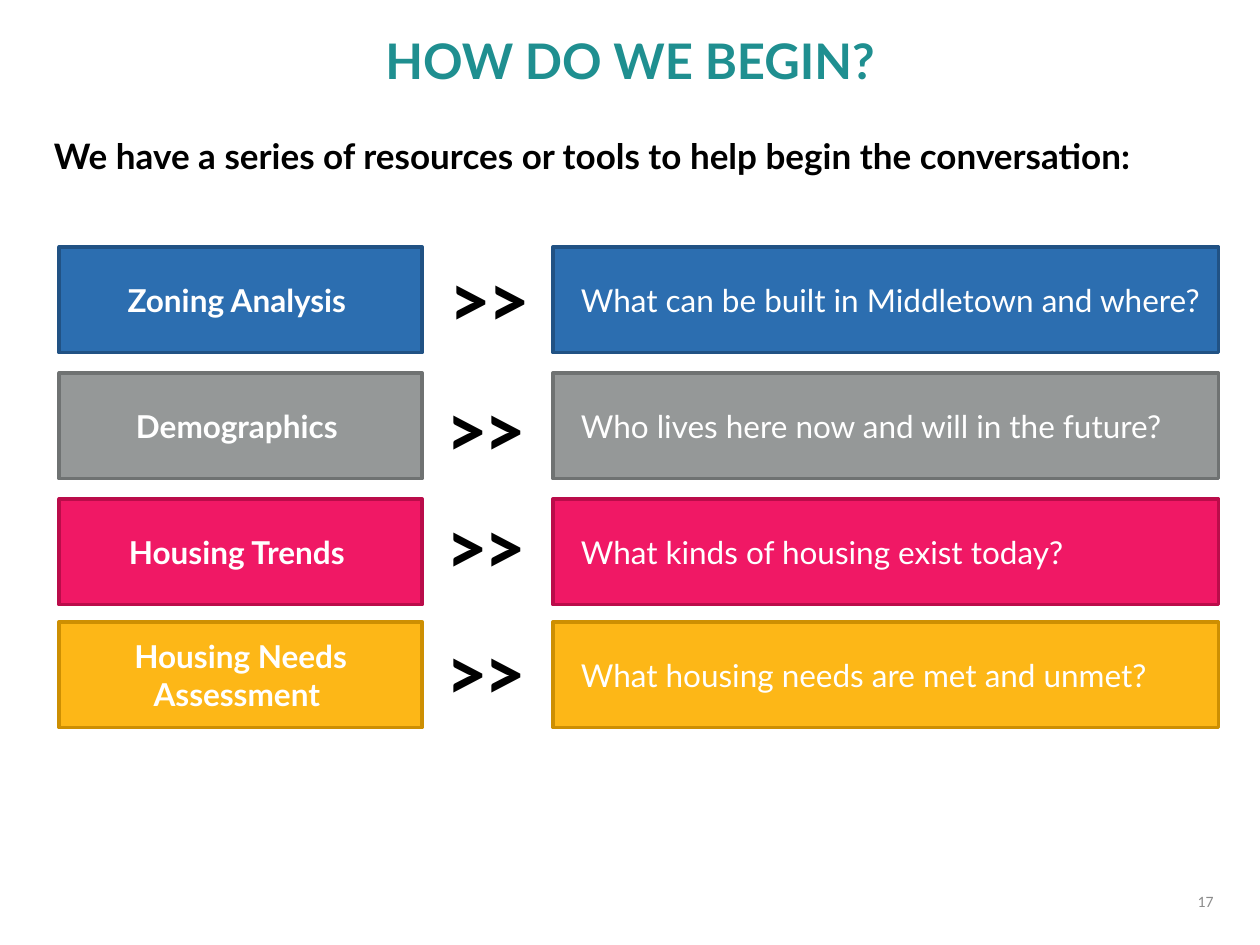
import pptx
import pptx.util
from pptx.dml.color import RGBColor
from pptx.enum.shapes import MSO_SHAPE
from pptx.enum.text import MSO_ANCHOR, PP_ALIGN

TEAL = RGBColor(0x1F, 0x8F, 0x90)
BLACK = RGBColor(0, 0, 0)
WHITE = RGBColor(255, 255, 255)
GRAY = RGBColor(0x8C, 0x8C, 0x8C)
BLUE, BLUE_EDGE = RGBColor(0x2C, 0x6E, 0xB0), RGBColor(0x21, 0x52, 0x84)
STONE, STONE_EDGE = RGBColor(0x95, 0x98, 0x98), RGBColor(0x6F, 0x72, 0x72)
PINK, PINK_EDGE = RGBColor(0xF0, 0x18, 0x65), RGBColor(0xBA, 0x0C, 0x4A)
GOLD, GOLD_EDGE = RGBColor(0xFD, 0xB7, 0x17), RGBColor(0xCD, 0x8F, 0x02)


class Deck:
    """Slide on a grid of 100 columns by 75 rows."""
    COLS, ROWS = 100, 75
    HEAD, BODY = "Lato", "Calibri"

    def __init__(self):
        self.prs = pptx.Presentation()
        self.prs.slide_width = pptx.util.Inches(10)
        self.prs.slide_height = pptx.util.Inches(7.5)
        self.s = self.prs.slides.add_slide(self.prs.slide_layouts[5])

    def cells(self, col, row, cols, rows):
        w = self.prs.slide_width / self.COLS
        h = self.prs.slide_height / self.ROWS
        return [round(v) for v in (col * w, row * h, cols * w, rows * h)]

    def add_run(self, sp, text, size, color, bold=False, font=HEAD,
                align=PP_ALIGN.LEFT, anchor=MSO_ANCHOR.TOP):
        tf = sp.text_frame
        tf.word_wrap = True
        tf.vertical_anchor = anchor
        p = tf.paragraphs[0]
        p.alignment = align
        r = p.add_run()
        r.text = text
        r.font.name, r.font.size, r.font.bold = font, pptx.util.Pt(size), bold
        r.font.color.rgb = color

    def title(self, text, *grid):
        sp = self.s.shapes.title
        sp.left, sp.top, sp.width, sp.height = self.cells(*grid)
        self.add_run(sp, text, 28, TEAL, True, align=PP_ALIGN.CENTER)

    def text(self, text, grid, size, color, **style):
        sp = self.s.shapes.add_textbox(*self.cells(*grid))
        self.add_run(sp, text, size, color, **style)

    def bar(self, text, grid, fill, edge, indent=0.1, **style):
        sp = self.s.shapes.add_shape(MSO_SHAPE.RECTANGLE, *self.cells(*grid))
        sp.shadow.inherit = False
        sp.fill.solid()
        sp.fill.fore_color.rgb = fill
        sp.line.color.rgb = edge
        sp.line.width = pptx.util.Pt(2)
        sp.text_frame.margin_left = pptx.util.Inches(indent)
        self.add_run(sp, text, 18, WHITE, anchor=MSO_ANCHOR.MIDDLE, **style)


# Each tool: label, question, fill, edge, row of the bars, place of the arrows
TOOLS = [
    ("Zoning Analysis ", "What can be built in Middletown and where?",
     BLUE, BLUE_EDGE, 19.6, (34.8, 19.4)),
    ("Demographics ", "Who lives here now and will in the future?",
     STONE, STONE_EDGE, 29.6, (34.5, 29.7)),
    ("Housing Trends ", "What kinds of housing exist today?",
     PINK, PINK_EDGE, 39.6, (34.5, 39)),
    ("Housing Needs Assessment ", "What housing needs are met and unmet?",
     GOLD, GOLD_EDGE, 49.35, (34.5, 49)),
]
BAR_ROWS = 8.4


def main():
    deck = Deck()

    # Heading and lead-in
    deck.title("HOW DO WE BEGIN?", 0, 1.9, 100, 5.7)
    deck.text("We have a series of resources or tools to help begin the conversation:",
              (3.3, 10.2, 93.3, 9.8), 20, BLACK, bold=True)

    # Tools and the questions they answer
    for label, question, fill, edge, row, arrows in TOOLS:
        deck.bar(label, (4.7, row, 28.8, BAR_ROWS), fill, edge,
                 bold=True, align=PP_ALIGN.CENTER)
        deck.bar(question, (43.9, row, 52.8, BAR_ROWS), fill, edge, indent=0.22)
        deck.text(">>", (*arrows, 9.1, BAR_ROWS), 44, BLACK,
                  bold=True, font=Deck.BODY)

    # Page number
    deck.text("17", (75, 69.5, 22.3, 4), 9, GRAY, font=Deck.BODY,
              align=PP_ALIGN.RIGHT, anchor=MSO_ANCHOR.MIDDLE)

    deck.prs.save("out.pptx")


if __name__ == "__main__":
    main()
